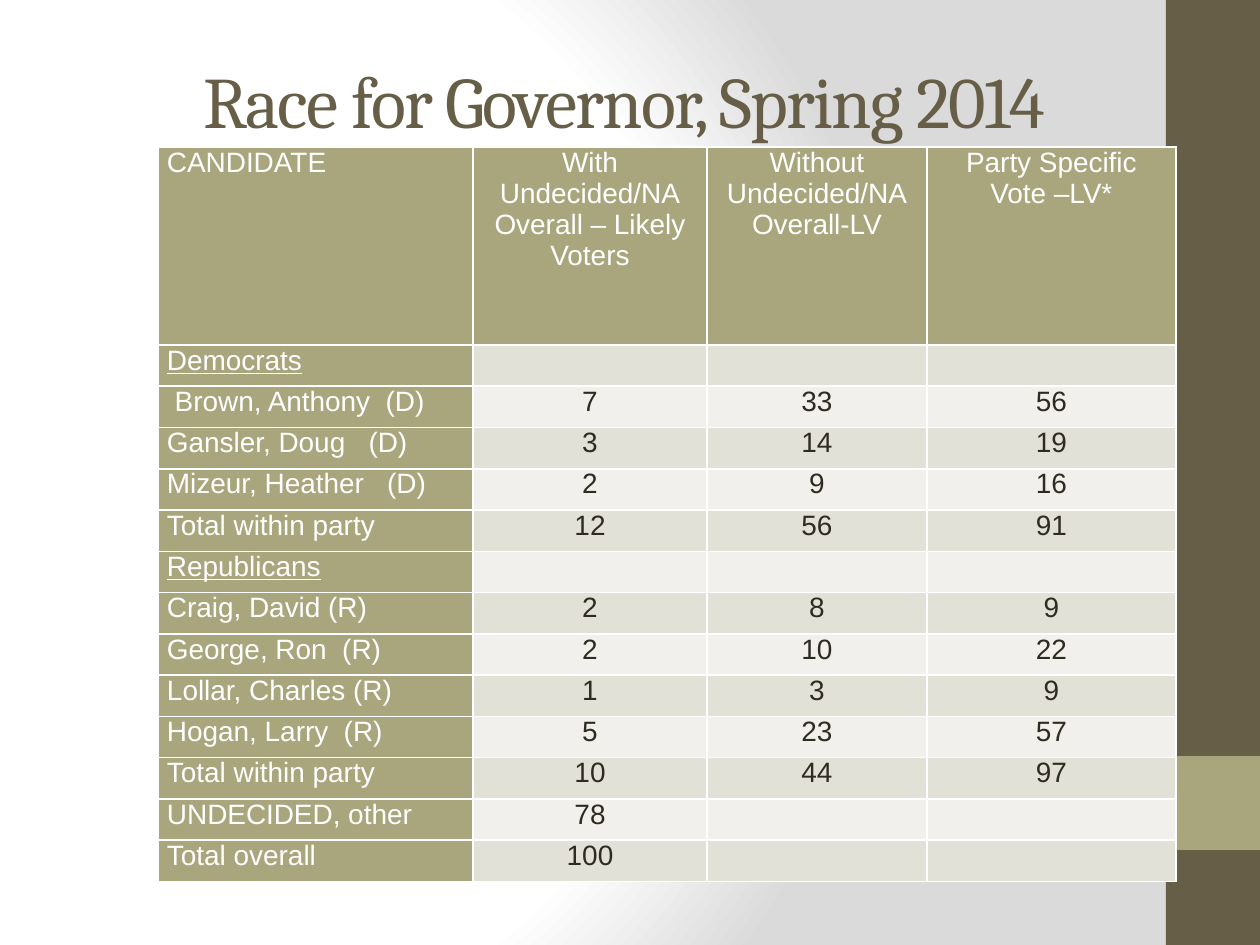
import dataclasses

import lxml.etree
import pptx
import pptx.dml.color
import pptx.enum.shapes
import pptx.enum.text
import pptx.oxml
import pptx.oxml.ns
import pptx.util

PIXELS_PER_INCH = 126
ALIGN = pptx.enum.text.PP_ALIGN


@dataclasses.dataclass(frozen=True)
class Theme:
    brown: str = "675E47"
    olive: str = "A9A57C"
    ink: str = "2F2B20"
    white: str = "FFFFFF"
    gray: str = "DADADA"
    bands: tuple = ("E2E1D7", "F1F0EC")
    title_font: str = "Cambria"
    body_font: str = "Arial"
    title_size: float = 41.4
    body_size: float = 16
    border_width: float = 1


THEME = Theme()

HEADERS = [
    "CANDIDATE",
    "With Undecided/NA\nOverall – Likely Voters",
    "Without Undecided/NA\nOverall-LV",
    "Party Specific Vote –LV*",
]
PARTIES = ("Democrats", "Republicans")
RESULTS = [
    ("Democrats",),
    (" Brown, Anthony  (D)", 7, 33, 56),
    ("Gansler, Doug   (D)", 3, 14, 19),
    ("Mizeur, Heather   (D)", 2, 9, 16),
    ("Total within party", 12, 56, 91),
    ("Republicans",),
    ("Craig, David (R)", 2, 8, 9),
    ("George, Ron  (R)", 2, 10, 22),
    ("Lollar, Charles (R)", 1, 3, 9),
    ("Hogan, Larry  (R)", 5, 23, 57),
    ("Total within party", 10, 44, 97),
    ("UNDECIDED, other", 78),
    ("Total overall", 100),
]


def px(length):
    return pptx.util.Emu(round(length * 914400 / PIXELS_PER_INCH))


def rgb(color):
    return pptx.dml.color.RGBColor.from_string(color)


def write_text(text_frame, text, font=THEME.body_font, size=THEME.body_size,
               color=THEME.ink, align=ALIGN.CENTER, underline=False, spacing=0):
    """Fill a text frame; each line of text becomes a paragraph."""
    text_frame.text = text
    for paragraph in text_frame.paragraphs:
        paragraph.alignment = align
        for run in paragraph.runs:
            run.font.name = font
            run.font.size = pptx.util.Pt(size)
            run.font.color.rgb = rgb(color)
            run.font.bold = False
            run.font.underline = underline
            if spacing:
                run.font._element.set("spc", str(round(spacing * 100)))


def set_background(slide):
    """Radial gradient, white to gray, centred towards the left."""
    fill = slide.background.fill
    fill.solid()
    fill.fore_color.rgb = rgb(THEME.white)
    properties = slide.background._cSld.bg.bgPr
    stops = [(0, THEME.white), (75, THEME.white), (100, THEME.gray)]
    stop_xml = "".join(
        f'<a:gs pos="{position * 1000}"><a:srgbClr val="{color}"/></a:gs>'
        for position, color in stops)
    gradient = pptx.oxml.parse_xml(
        f'<a:gradFill {pptx.oxml.ns.nsdecls("a")} rotWithShape="1">'
        f'<a:gsLst>{stop_xml}</a:gsLst><a:path path="circle">'
        '<a:fillToRect l="20000" t="50000" r="100000" b="50000"/>'
        '</a:path></a:gradFill>')
    properties.replace(properties.find(pptx.oxml.ns.qn("a:solidFill")), gradient)


def add_rectangle(slide, left, top, width, height, color):
    shape = slide.shapes.add_shape(
        pptx.enum.shapes.MSO_SHAPE.RECTANGLE,
        px(left), px(top), px(width), px(height))
    shape.shadow.inherit = False
    shape.fill.solid()
    shape.fill.fore_color.rgb = rgb(color)
    shape.line.fill.background()


def add_side_band(slide, left, top, width, height):
    add_rectangle(slide, left, top, width, height, THEME.brown)
    add_rectangle(slide, left, top + height * 4 // 5, width, width, THEME.olive)


def place_title(slide, left, top, width, height):
    title = slide.shapes.title
    title.left, title.top = px(left), px(top)
    title.width, title.height = px(width), px(height)
    text_frame = title.text_frame
    text_frame.word_wrap = True
    text_frame.auto_size = pptx.enum.text.MSO_AUTO_SIZE.NONE
    text_frame.vertical_anchor = pptx.enum.text.MSO_ANCHOR.MIDDLE
    write_text(text_frame, "Race for Governor, Spring 2014", font=THEME.title_font,
               size=THEME.title_size, color=THEME.brown, spacing=-1)


def style_cell(cell, fill_color):
    cell.margin_left = cell.margin_right = px(9)
    cell.margin_top = cell.margin_bottom = 0
    cell.vertical_anchor = pptx.enum.text.MSO_ANCHOR.TOP
    properties = cell._tc.get_or_add_tcPr()
    for side in ("lnL", "lnR", "lnT", "lnB"):
        line = lxml.etree.SubElement(
            properties, pptx.oxml.ns.qn(f"a:{side}"),
            w=str(pptx.util.Pt(THEME.border_width)))
        line_fill = lxml.etree.SubElement(line, pptx.oxml.ns.qn("a:solidFill"))
        lxml.etree.SubElement(
            line_fill, pptx.oxml.ns.qn("a:srgbClr"), val=THEME.white)
    cell.fill.solid()
    cell.fill.fore_color.rgb = rgb(fill_color)


def add_results_table(slide, left, top, width, height):
    column_widths = [315, 234, 220, width - 769]
    header_height = 198
    rows = [HEADERS] + RESULTS
    table = slide.shapes.add_table(
        len(rows), len(HEADERS), px(left), px(top), px(width), px(height)).table
    for column, column_width in zip(table.columns, column_widths):
        column.width = px(column_width)
    for row in table.rows:
        row.height = px((height - header_height) / len(RESULTS))
    table.rows[0].height = px(header_height)

    for row_index, values in enumerate(rows):
        for column_index in range(len(HEADERS)):
            cell = table.cell(row_index, column_index)
            is_heading = row_index == 0 or column_index == 0
            band = THEME.bands[(row_index - 1) % 2]
            style_cell(cell, THEME.olive if is_heading else band)
            if column_index < len(values):
                text = str(values[column_index])
                write_text(cell.text_frame, text,
                           color=THEME.white if is_heading else THEME.ink,
                           align=ALIGN.CENTER if column_index else ALIGN.LEFT,
                           underline=text in PARTIES)


def main():
    presentation = pptx.Presentation()
    presentation.slide_width = px(1260)
    presentation.slide_height = px(945)
    slide = presentation.slides.add_slide(presentation.slide_layouts[5])
    set_background(slide)
    add_side_band(slide, 1166, 0, 94, 945)
    place_title(slide, 73, 53, 1102, 94)
    add_results_table(slide, 158, 147, 1018, 735)
    presentation.save("out.pptx")


if __name__ == "__main__":
    main()
